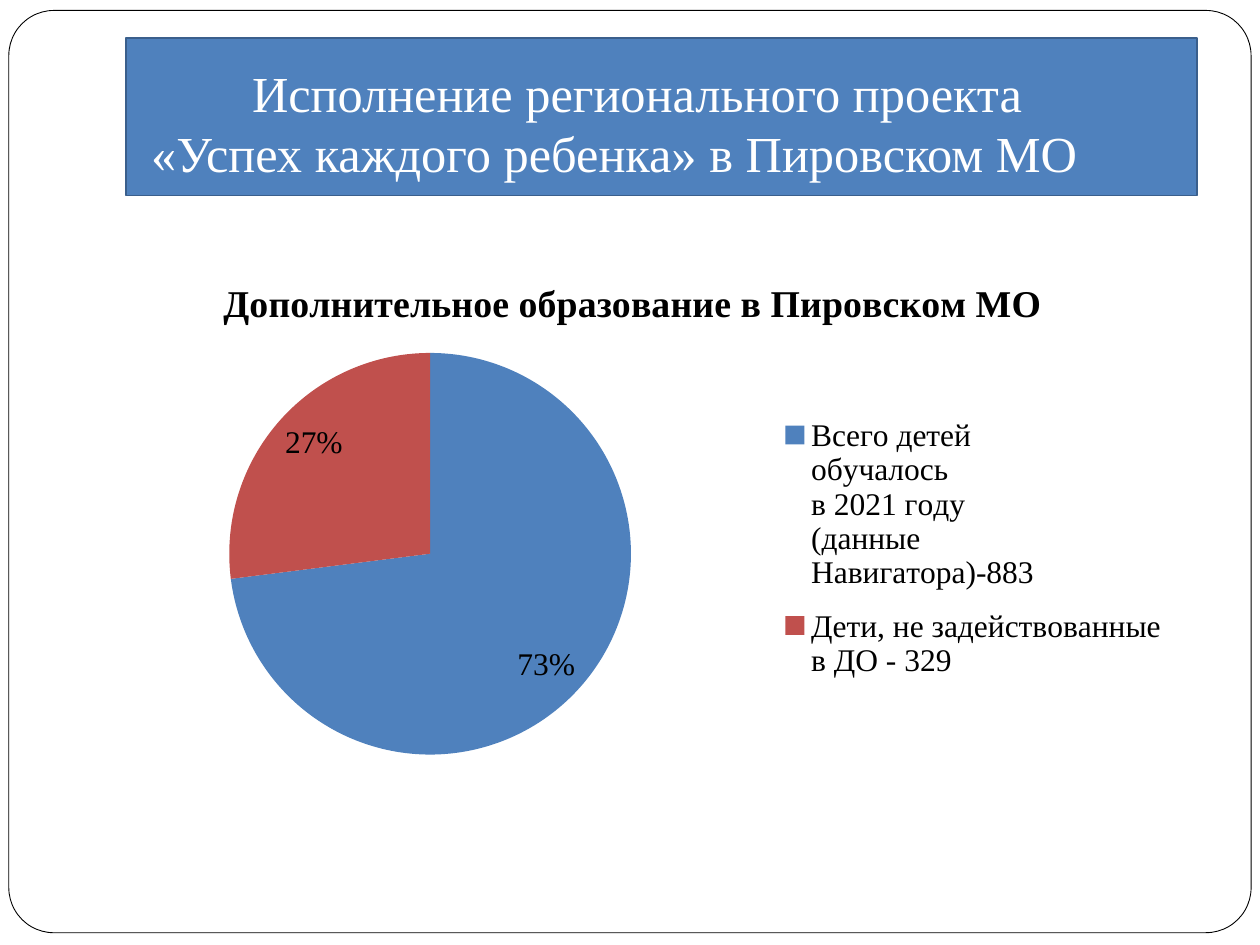
import pptx
import pptx.util
import pptx.chart.data
import pptx.dml.color
import pptx.enum.chart
import pptx.enum.shapes
import pptx.enum.text
import pptx.oxml
import pptx.oxml.ns
from dataclasses import dataclass


@dataclass(frozen=True)
class Theme:
    font: str = "Times New Roman"
    white: str = "FFFFFF"
    black: str = "000000"
    blue: str = "4F81BD"
    red: str = "C0504D"
    edge: str = "3A5F8C"
    title_size: float = 28.8
    chart_title_size: float = 21.6
    body_size: float = 18


THEME = Theme()
WIDTH, HEIGHT = 10, 7.5

TITLE_LINES = ["Исполнение регионального проекта",
               "«Успех каждого ребенка» в Пировском МО"]
CHART_TITLE = "Дополнительное образование в Пировском МО"
SLICES = [
    ("Всего детей\nобучалось\nв 2021 году\n(данные\nНавигатора)-883", 73, THEME.blue),
    ("Дети, не задействованные в ДО - 329", 27, THEME.red),
]

FRAME_AREA = (0.007, 0.011, 0.986, 0.976)
TITLE_AREA = (0.1, 0.04, 0.85, 0.167)
CHART_AREA = (0.067, 0.27, 0.871, 0.545)
PIE_SHARE = (0.13, 0.19, 0.37, 0.78)
LEGEND_SHARE = (0.63, 0.28, 0.36, 0.58)


def inches(shares):
    return [pptx.util.Inches(share * side)
            for share, side in zip(shares, (WIDTH, HEIGHT) * 2)]


def rgb(color):
    return pptx.dml.color.RGBColor.from_string(color)


def paint(shape, fill, line, weight):
    shape.fill.solid()
    shape.fill.fore_color.rgb = rgb(fill)
    shape.line.color.rgb = rgb(line)
    shape.line.width = pptx.util.Pt(weight)
    shape.shadow.inherit = False


def style(font, size, color, bold=False):
    font.name = THEME.font
    font.size = pptx.util.Pt(size)
    font.color.rgb = rgb(color)
    font.bold = bold


def set_layout(element, position, shares, inner=False):
    for old in element.findall(pptx.oxml.ns.qn("c:layout")):
        element.remove(old)
    target = '<c:layoutTarget val="inner"/>' if inner else ""
    modes = "".join(f'<c:{side}Mode val="edge"/>' for side in "xy")
    sizes = "".join(f'<c:{side} val="{share}"/>' for side, share in zip("xywh", shares))
    element.insert(position, pptx.oxml.parse_xml(
        f'<c:layout {pptx.oxml.ns.nsdecls("c")}><c:manualLayout>'
        f'{target}{modes}{sizes}</c:manualLayout></c:layout>'))


def add_frame(page):
    frame = page.shapes.add_shape(
        pptx.enum.shapes.MSO_SHAPE.ROUNDED_RECTANGLE, *inches(FRAME_AREA))
    frame.adjustments[0] = 0.049
    paint(frame, THEME.white, THEME.black, 0.5)


def add_title(page):
    title = page.shapes.title
    page.shapes.element.append(title.element)
    title.left, title.top, title.width, title.height = inches(TITLE_AREA)
    paint(title, THEME.blue, THEME.edge, 1)
    box = title.text_frame
    box.word_wrap = True
    box.auto_size = pptx.enum.text.MSO_AUTO_SIZE.NONE
    box.vertical_anchor = pptx.enum.text.MSO_ANCHOR.BOTTOM
    box.margin_bottom = pptx.util.Inches(0.1)
    box.text = "\v".join(TITLE_LINES)
    para = box.paragraphs[0]
    para.alignment = pptx.enum.text.PP_ALIGN.LEFT
    style(para.font, THEME.title_size, THEME.white)
    indents = para._p.get_or_add_pPr()
    indents.set("marL", str(pptx.util.Inches(0.1)))
    indents.set("indent", str(pptx.util.Inches(0.8)))


def add_pie(page):
    names, values, colors = zip(*SLICES)
    data = pptx.chart.data.CategoryChartData()
    data.categories = names
    data.add_series(CHART_TITLE, values)
    chart = page.shapes.add_chart(
        pptx.enum.chart.XL_CHART_TYPE.PIE, *inches(CHART_AREA), data).chart
    style(chart.font, THEME.body_size, THEME.black)

    chart.has_title = True
    chart.chart_title.include_in_layout = False
    heading = chart.chart_title.text_frame
    heading.text = CHART_TITLE
    style(heading.paragraphs[0].font, THEME.chart_title_size, THEME.black, True)

    chart.has_legend = True
    chart.legend.position = pptx.enum.chart.XL_LEGEND_POSITION.RIGHT
    chart.legend.include_in_layout = False
    style(chart.legend.font, THEME.body_size, THEME.black)

    plot = chart.plots[0]
    plot.vary_by_categories = True
    for number, color in enumerate(colors):
        fill = plot.series[0].points[number].format.fill
        fill.solid()
        fill.fore_color.rgb = rgb(color)
    plot.has_data_labels = True
    labels = plot.data_labels
    labels.show_percentage = True
    labels.show_value = False
    labels.number_format = "0%"
    labels.number_format_is_linked = False
    labels.position = pptx.enum.chart.XL_LABEL_POSITION.INSIDE_END
    style(labels.font, THEME.body_size, THEME.black)

    chart_root = chart.element
    set_layout(chart_root.find(".//" + pptx.oxml.ns.qn("c:plotArea")), 0, PIE_SHARE, True)
    set_layout(chart_root.find(".//" + pptx.oxml.ns.qn("c:legend")), 1, LEGEND_SHARE)


def main():
    deck = pptx.Presentation()
    deck.slide_width = pptx.util.Inches(WIDTH)
    deck.slide_height = pptx.util.Inches(HEIGHT)
    page = deck.slides.add_slide(deck.slide_layouts.get_by_name("Title Only"))
    add_frame(page)
    add_title(page)
    add_pie(page)
    deck.save("out.pptx")


if __name__ == "__main__":
    main()
